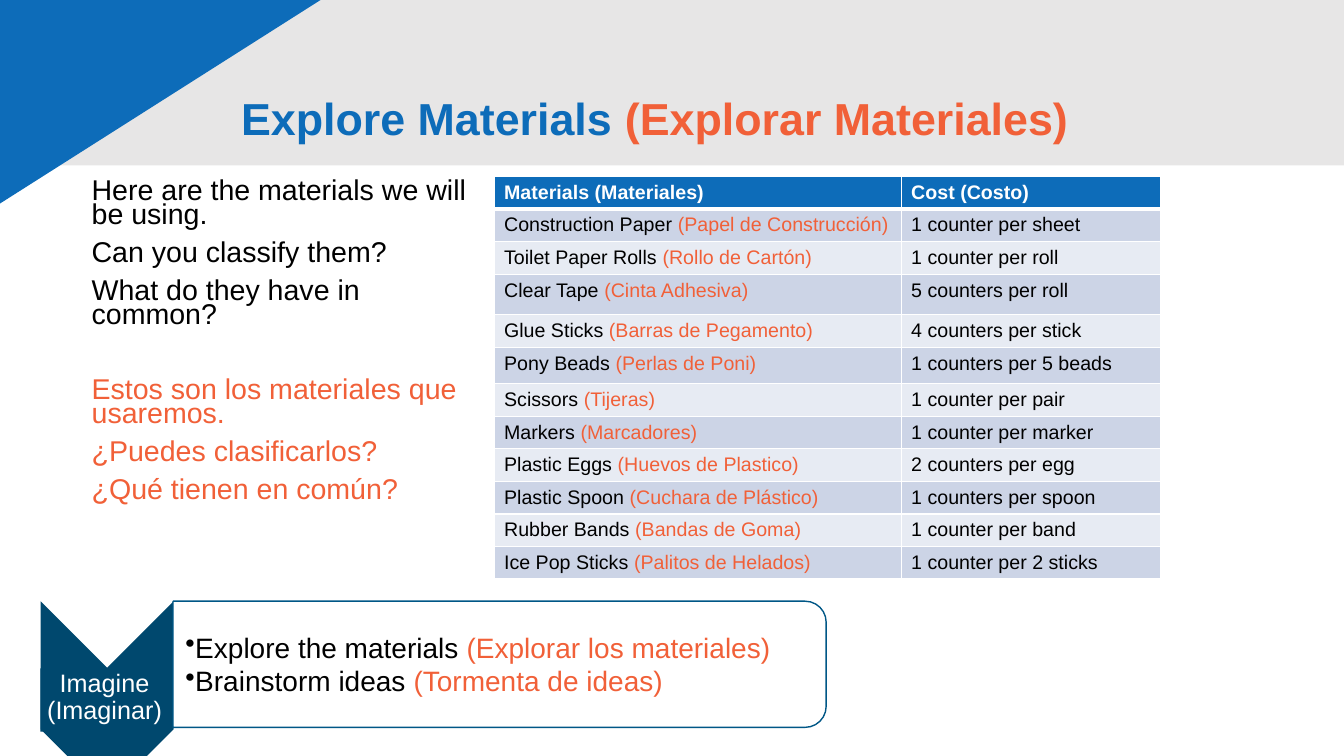
"""Build the bilingual slide on exploring materials."""
from dataclasses import dataclass

import lxml.etree
import pptx
import pptx.dml.color
import pptx.enum.shapes
import pptx.enum.text
import pptx.oxml
import pptx.oxml.ns
import pptx.util

Cm, Pt = pptx.util.Cm, pptx.util.Pt
SHAPE = pptx.enum.shapes.MSO_SHAPE
ALIGN = pptx.enum.text.PP_ALIGN
ANCHOR = pptx.enum.text.MSO_ANCHOR
qn = pptx.oxml.ns.qn

BLUE, NAVY, RUST = "0D6CB9", "00486E", "F16038"
BLACK, WHITE, GRAY = "000000", "FFFFFF", "E7E6E6"
BANDS = ("CCD4E6", "E7EBF3")


@dataclass
class Box:
    left: float
    top: float
    width: float
    height: float

    def spots(self) -> list:
        return [Cm(v) for v in (self.left, self.top, self.width, self.height)]


@dataclass
class Pair:
    main: str
    local: str = ""


@dataclass
class Item:
    name: Pair
    cost: str
    height: float = 0.82


@dataclass
class Line:
    text: str
    color: str
    before: float = 10


ITEMS = [
    Item(Pair("Construction Paper ", "(Papel de Construcción)"), "1 counter per sheet"),
    Item(Pair("Toilet Paper Rolls ", "(Rollo de Cartón)"), "1 counter per roll"),
    Item(Pair("Clear Tape ", "(Cinta Adhesiva)"), "5 counters per roll", 1.02),
    Item(Pair("Glue Sticks ", "(Barras de Pegamento)"), "4 counters per stick"),
    Item(Pair("Pony Beads ", "(Perlas de Poni)"), "1 counters per 5 beads", 0.92),
    Item(Pair("Scissors ", "(Tijeras)"), "1 counter per pair"),
    Item(Pair("Markers ", "(Marcadores)"), "1 counter per marker"),
    Item(Pair("Plastic Eggs ", "(Huevos de Plastico)"), "2 counters per egg"),
    Item(Pair("Plastic Spoon ", "(Cuchara de Plástico)"), "1 counters per spoon"),
    Item(Pair("Rubber Bands ", "(Bandas de Goma)"), "1 counter per band"),
    Item(Pair("Ice Pop Sticks ", "(Palitos de Helados)"), "1 counter per 2 sticks"),
]
LINES = [
    Line("Here are the materials we will be using.", BLACK, 0),
    Line("Can you classify them?", BLACK),
    Line("What do they have in common?", BLACK),
    Line("Estos son los materiales que usaremos.", RUST, 36.5),
    Line("¿Puedes clasificarlos?", RUST),
    Line("¿Qué tienen en común?", RUST),
]
STEPS = [
    Pair("Explore the materials ", "(Explorar los materiales)"),
    Pair("Brainstorm ideas ", "(Tormenta de ideas)"),
]


def rgb(code: str) -> pptx.dml.color.RGBColor:
    return pptx.dml.color.RGBColor.from_string(code)


def paint(thing, code: str) -> None:
    thing.fill.solid()
    thing.fill.fore_color.rgb = rgb(code)


def plain(shape, code: str) -> None:
    shape.shadow.inherit = False
    paint(shape, code)
    shape.line.fill.background()


def style(run, size: float, code: str, bold: bool = False) -> None:
    run.font.name = "Arial"
    run.font.size = Pt(size)
    run.font.bold = bold
    run.font.color.rgb = rgb(code)


def write(para, pair: Pair, size: float, code: str, bold: bool = False) -> None:
    para.text = pair.main
    style(para.runs[0], size, code, bold)
    if pair.local:
        run = para.add_run()
        run.text = pair.local
        style(run, size, RUST, bold)


def inset(frame, left: float, rest: float) -> None:
    frame.word_wrap = True
    frame.margin_left = Cm(left)
    frame.margin_top = frame.margin_right = frame.margin_bottom = Cm(rest)


def edge(cell, low: float) -> None:
    props = cell._tc.get_or_add_tcPr()
    for side, width in (("L", 1), ("R", 1), ("T", 1), ("B", low)):
        line = lxml.etree.SubElement(props, qn(f"a:ln{side}"), w=str(Pt(width)))
        solid = lxml.etree.SubElement(line, qn("a:solidFill"))
        lxml.etree.SubElement(solid, qn("a:srgbClr"), val=WHITE)


def back(shapes) -> None:
    band = shapes.add_shape(SHAPE.RECTANGLE, *Box(0, 0, 33.87, 4.17).spots())
    plain(band, GRAY)
    pen = shapes.build_freeform(0, 0)
    pen.add_line_segments([(Cm(8.08), 0), (0, Cm(5.13))], close=True)
    plain(pen.convert_to_shape(), BLUE)


def head(shapes) -> None:
    title = shapes.title
    title.left, title.top, title.width, title.height = Box(5.82, 1.22, 24.64, 3.68).spots()
    frame = title.text_frame
    frame.auto_size = pptx.enum.text.MSO_AUTO_SIZE.NONE
    frame.vertical_anchor = ANCHOR.MIDDLE
    para = frame.paragraphs[0]
    write(para, Pair("Explore Materials ", "(Explorar Materiales)"), 32, BLUE, True)
    para.alignment = ALIGN.LEFT
    para.line_spacing = 0.9
    shapes._spTree.append(title._element)


def prices(shapes) -> None:
    rows = [Item(Pair("Materials (Materiales)"), "Cost (Costo)"), *ITEMS]
    tall = sum(row.height for row in rows)
    table = shapes.add_table(len(rows), 2, *Box(12.45, 4.45, 16.79, tall).spots()).table
    table.horz_banding = False
    for col, width in zip(table.columns, (10.26, 6.53)):
        col.width = Cm(width)
    for num, row in enumerate(rows):
        table.rows[num].height = Cm(row.height)
        first = num == 0
        for col, pair in enumerate((row.name, Pair(row.cost))):
            cell = table.cell(num, col)
            write(cell.text_frame.paragraphs[0], pair, 14, WHITE if first else BLACK, first)
            edge(cell, 3 if first else 1)
            paint(cell, BLUE if first else BANDS[(num - 1) % 2])


def stage(shapes) -> None:
    arrow = shapes.add_shape(SHAPE.CHEVRON, *Box(0.25, 15.93, 4.9, 3.35).spots())
    arrow.rotation = 90
    plain(arrow, NAVY)

    label = shapes.add_shape(SHAPE.RECTANGLE, *Box(1.02, 16.84, 3.23, 1.6).spots())
    plain(label, NAVY)
    frame = label.text_frame
    inset(frame, 0.05, 0.05)
    frame.vertical_anchor = ANCHOR.TOP
    para = frame.paragraphs[0]
    write(para, Pair("Imagine (Imaginar)"), 18, WHITE)
    para.alignment = ALIGN.CENTER
    para.line_spacing = 0.9

    panel = shapes.add_shape(SHAPE.ROUND_2_SAME_RECTANGLE, *Box(11, 8.51, 3.18, 16.46).spots())
    panel.rotation = 90
    plain(panel, WHITE)
    panel.line.color.rgb = rgb("005786")
    panel.line.width = Pt(1)
    tint = panel._element.spPr.find(qn("a:solidFill"))[0]
    lxml.etree.SubElement(tint, qn("a:alpha"), val="90000")

    frame = shapes.add_textbox(*Box(4.37, 15.29, 16.31, 2.87).spots()).text_frame
    inset(frame, 0.3, 0.03)
    frame.vertical_anchor = ANCHOR.MIDDLE
    for num, step in enumerate(STEPS):
        para = frame.add_paragraph() if num else frame.paragraphs[0]
        props = para._p.get_or_add_pPr()
        props.set("marL", "0")
        props.set("indent", "0")
        lxml.etree.SubElement(props, qn("a:buChar"), char="•")
        write(para, step, 20, BLACK)


def notes(shapes) -> None:
    frame = shapes.add_textbox(*Box(2.06, 4.45, 9.96, 8.66).spots()).text_frame
    frame.word_wrap = True
    for num, line in enumerate(LINES):
        para = frame.add_paragraph() if num else frame.paragraphs[0]
        write(para, Pair(line.text), 20.4, line.color)
        para.line_spacing = 0.7
        para.space_before = Pt(line.before)


def main() -> None:
    deck = pptx.Presentation()
    deck.slide_width, deck.slide_height = Cm(33.87), Cm(19.05)
    shapes = deck.slides.add_slide(deck.slide_layouts[5]).shapes
    for draw in (back, head, prices, stage, notes):
        draw(shapes)
    deck.save("out.pptx")


if __name__ == "__main__":
    main()
